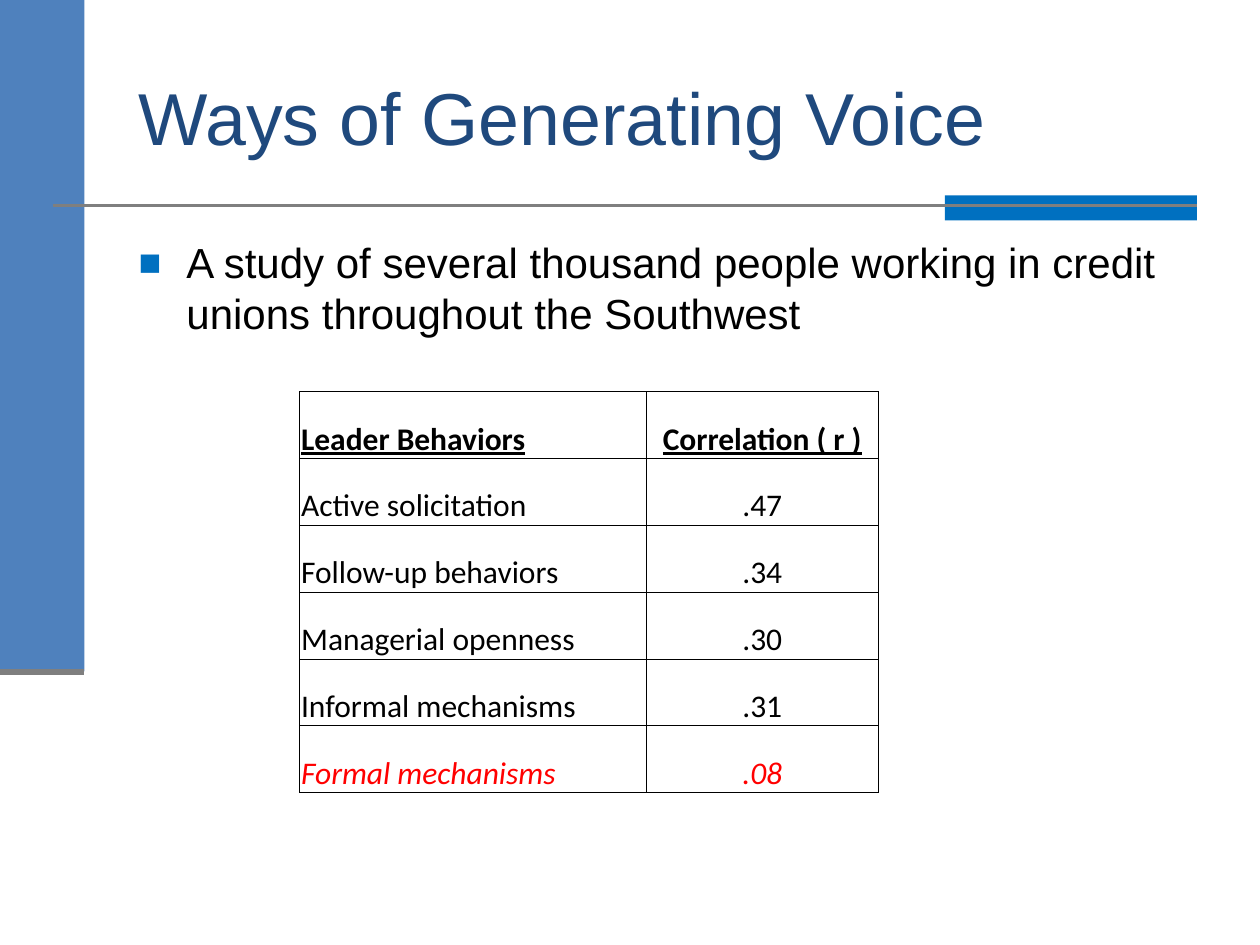
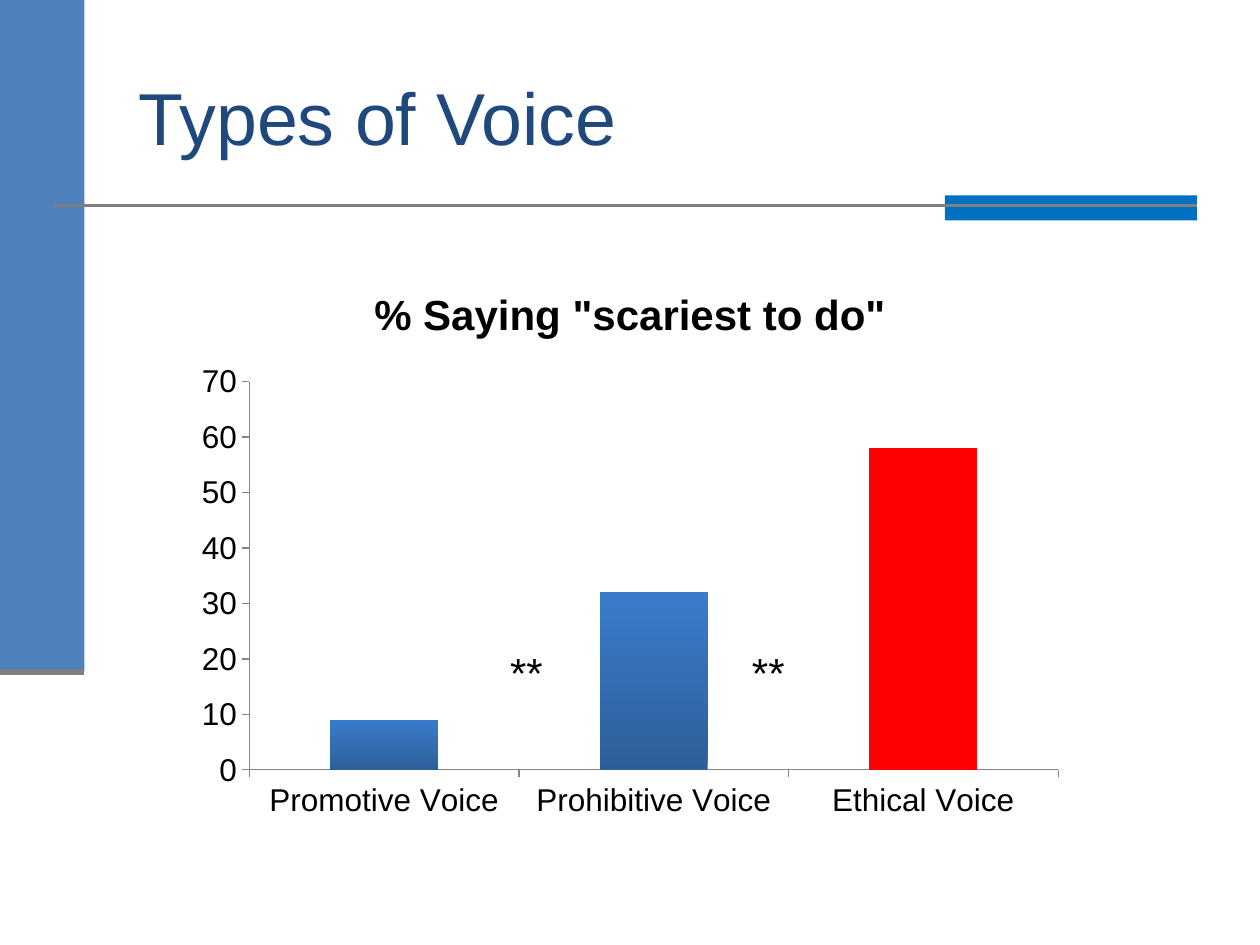
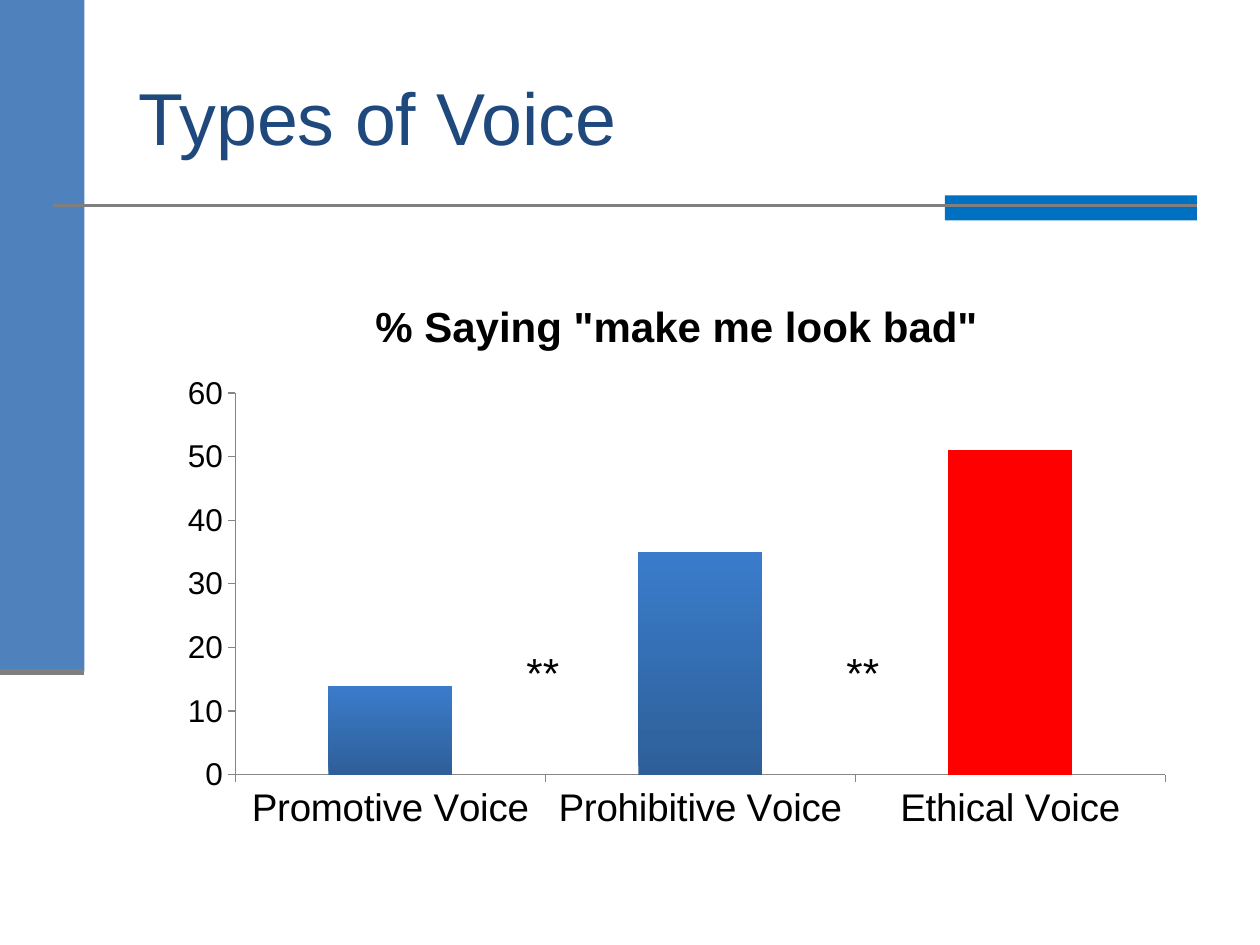
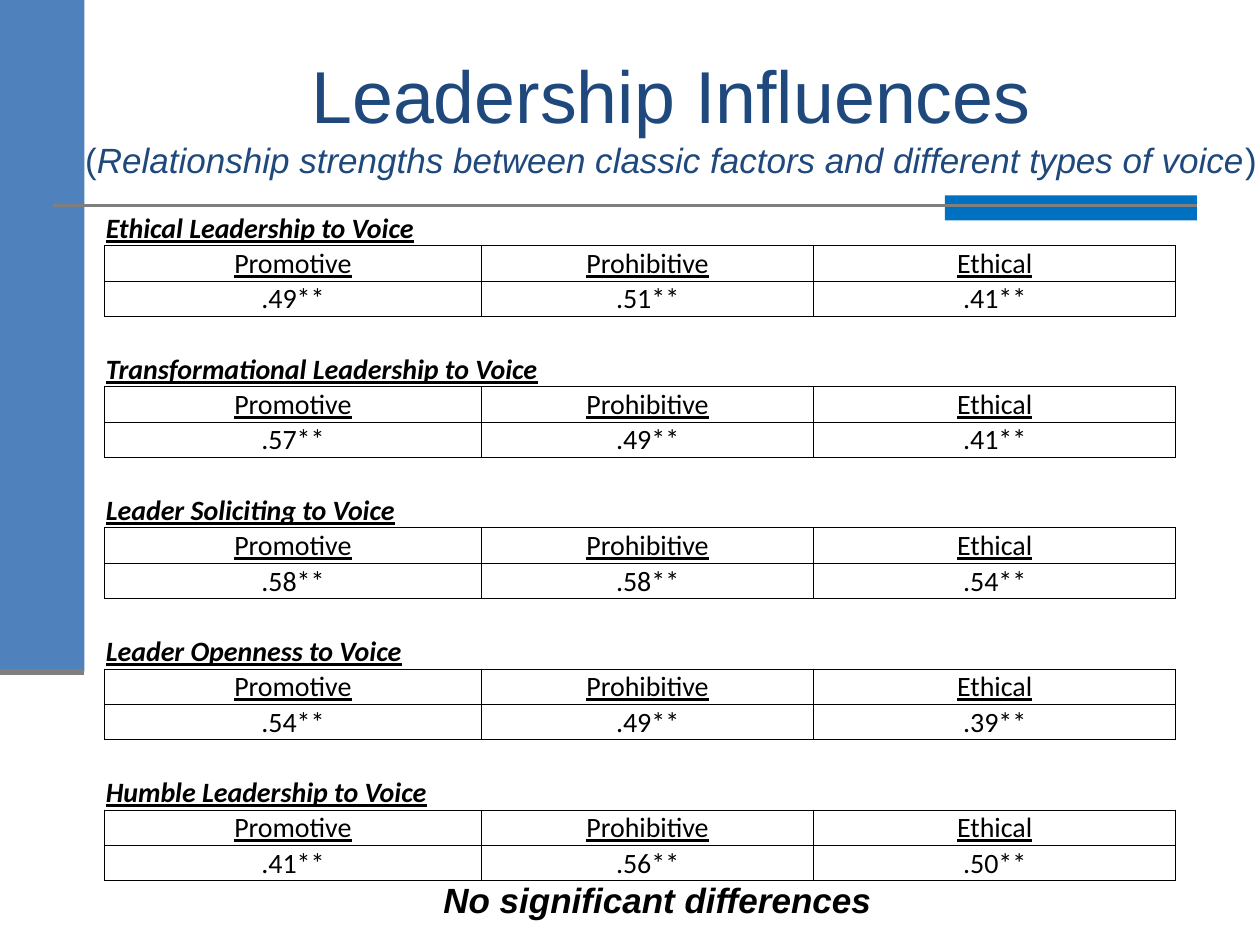
from lxml import etree
from pptx import Presentation
from pptx.chart.data import CategoryChartData
from pptx.dml.color import RGBColor
from pptx.enum.chart import XL_CHART_TYPE, XL_TICK_MARK
from pptx.enum.shapes import MSO_CONNECTOR, MSO_SHAPE
from pptx.enum.text import MSO_ANCHOR, MSO_AUTO_SIZE, PP_ALIGN
from pptx.oxml.ns import qn
from pptx.util import Inches, Pt

COLUMNS = XL_CHART_TYPE.COLUMN_CLUSTERED
TICK_OUT, TICK_NONE = XL_TICK_MARK.OUTSIDE, XL_TICK_MARK.NONE
RECTANGLE, STRAIGHT = MSO_SHAPE.RECTANGLE, MSO_CONNECTOR.STRAIGHT
MIDDLE, BOTTOM = MSO_ANCHOR.MIDDLE, MSO_ANCHOR.BOTTOM
LEFT, CENTER = PP_ALIGN.LEFT, PP_ALIGN.CENTER
FIXED, GROW = MSO_AUTO_SIZE.NONE, MSO_AUTO_SIZE.SHAPE_TO_FIT_TEXT

BLACK, RED, GRAY, NAVY = "000000", "FF0000", "7F7F7F", "1F497D"
BAND_BLUE, ACCENT_BLUE = "4F81BD", "0070C0"
BAR_BOTTOM, BAR_TOP, AXIS_GRAY = "2E5F99", "3A7CCB", "868686"
BODY_FONT, TABLE_FONT = "Arial", "Calibri"
PLAIN_TABLE_STYLE = "{2D5ABB26-0587-4C30-8999-92F81FD0307C}"

TITLE_BOX = (1, 0.3, 8.5, 1.25)
BANDS = [((0, 0, 0.67, 5.33), BAND_BLUE), ((7.5, 1.55, 2, 0.2), ACCENT_BLUE)]
RULES = [((0.42, 1.63, 9.5, 1.63), 1.5), ((0, 5.33, 0.67, 5.33), 3.5)]

STUDY = "A study of several thousand people working in credit unions throughout the Southwest"
CORRELATIONS = [
    ("Leader Behaviors", "Correlation ( r )"),
    ("Active solicitation", ".47"),
    ("Follow-up behaviors", ".34"),
    ("Managerial openness", ".30"),
    ("Informal mechanisms", ".31"),
    ("Formal mechanisms", ".08"),
]

VOICES = ["Promotive", "Prohibitive", "Ethical"]
VOICE_CHARTS = [
    {"title": '% Saying "scariest to do"', "values": (9, 32, 58), "top": 70,
     "box": (1.46, 2.08, 7.08, 4.5), "category_size": 18, "stars": (3.95, 5.87)},
    {"title": '% Saying "make me look bad"', "values": (14, 35, 51), "top": 60,
     "box": (1.33, 2.17, 8.08, 4.5), "category_size": 22, "stars": (4.08, 6.62)},
]

SUBTITLE = "Relationship strengths between classic factors and different types of voice"
INFLUENCES = [
    ("Ethical Leadership to Voice", (".49**", ".51**", ".41**")),
    ("Transformational Leadership to Voice", (".57**", ".49**", ".41**")),
    ("Leader Soliciting to Voice", (".58**", ".58**", ".54**")),
    ("Leader Openness to Voice", (".54**", ".49**", ".39**")),
    ("Humble Leadership to Voice", (".41**", ".56**", ".50**")),
]


def color(value):
    return RGBColor.from_string(value)


def inches(lengths):
    return [Inches(length) for length in lengths]


def place(shape, box):
    shape.left, shape.top, shape.width, shape.height = inches(box)


def style(font, size, tint=BLACK, name=BODY_FONT, bold=False, italic=False, underline=False):
    font.size, font.name = Pt(size), name
    font.bold, font.italic, font.underline = bold, italic, underline
    font.color.rgb = color(tint)


def start_slide(deck, layout, title="", box=TITLE_BOX, align=LEFT):
    page = deck.slides.add_slide(deck.slide_layouts[layout])
    for band_box, fill in BANDS:
        band = page.shapes.add_shape(RECTANGLE, *inches(band_box))
        band.shadow.inherit = False
        band.fill.solid()
        band.fill.fore_color.rgb = color(fill)
        band.line.fill.background()
    for ends, width in RULES:
        rule = page.shapes.add_connector(STRAIGHT, *inches(ends))
        rule.line.width = Pt(width)
        rule.line.color.rgb = color(GRAY)
        etree.SubElement(rule._element.spPr, qn("a:effectLst"))
    heading = page.shapes.title
    place(heading, box)
    frame = heading.text_frame
    frame.auto_size, frame.vertical_anchor = FIXED, MIDDLE
    para = frame.paragraphs[0]
    para.alignment = align
    style(para.font, 42, NAVY)
    if title:
        para.text = title
    return page


def add_label(page, text, box, size, **looks):
    label = page.shapes.add_textbox(*inches(box))
    frame = label.text_frame
    frame.word_wrap, frame.auto_size = False, GROW
    para = frame.paragraphs[0]
    para.text = text
    style(para.font, size, **looks)


def add_bullet(para):
    properties = para._p.get_or_add_pPr()
    properties.set("marL", str(Inches(0.38)))
    properties.set("indent", str(-Inches(0.38)))
    tint = etree.SubElement(properties, qn("a:buClr"))
    etree.SubElement(tint, qn("a:srgbClr"), val=ACCENT_BLUE)
    etree.SubElement(properties, qn("a:buSzPct"), val="90000")
    etree.SubElement(properties, qn("a:buFont"), typeface=BODY_FONT)
    etree.SubElement(properties, qn("a:buChar"), char="■")


def add_plain_table(page, rows, left, top, widths, row_height):
    frame = page.shapes.add_table(rows, len(widths), *inches((left, top, sum(widths), rows * row_height)))
    table = frame.table
    table.first_row = table.horz_banding = False
    table._tbl.tblPr.find(qn("a:tableStyleId")).text = PLAIN_TABLE_STYLE
    for column, width in zip(table.columns, widths):
        column.width = Inches(width)
    for row in table.rows:
        row.height = Inches(row_height)
    return table


def fill_cell(cell, text, size, align=CENTER, border=True, **looks):
    cell.margin_left = cell.margin_right = cell.margin_top = Inches(0.01)
    cell.margin_bottom = 0
    cell.vertical_anchor = BOTTOM
    if border:
        properties = cell._tc.get_or_add_tcPr()
        for side in ("lnL", "lnR", "lnT", "lnB"):
            line = etree.SubElement(properties, qn(f"a:{side}"), w=str(Pt(0.5)))
            fill = etree.SubElement(line, qn("a:solidFill"))
            etree.SubElement(fill, qn("a:srgbClr"), val=BLACK)
    cell.fill.background()
    para = cell.text_frame.paragraphs[0]
    if text:
        para.text = text
    para.alignment = align
    style(para.font, size, name=TABLE_FONT, **looks)


def build_correlations(deck):
    page = start_slide(deck, 1, "Ways of Generating Voice")
    body = page.placeholders[1]
    place(body, (1, 1.83, 9, 1.36))
    body.text_frame.auto_size = FIXED
    para = body.text_frame.paragraphs[0]
    para.text = STUDY
    add_bullet(para)
    para.space_before = Pt(5)
    style(para.font, 24)

    table = add_plain_table(page, len(CORRELATIONS), 2.38, 3.11, (2.75, 1.84), 0.53)
    last = len(CORRELATIONS) - 1
    for row, texts in enumerate(CORRELATIONS):
        for column, text in enumerate(texts):
            fill_cell(table.cell(row, column), text, 18, CENTER if column else LEFT,
                      tint=RED if row == last else BLACK, italic=row == last,
                      bold=row == 0, underline=row == 0)


def build_voice_chart(deck, content):
    page = start_slide(deck, 5, "Types of Voice")
    data = CategoryChartData()
    data.categories = [f"{voice} Voice" for voice in VOICES]
    data.add_series("Series 1", content["values"])
    chart = page.shapes.add_chart(COLUMNS, *inches(content["box"]), data).chart
    style(chart.font, 18)
    chart.has_legend = False
    chart.has_title = True
    para = chart.chart_title.text_frame.paragraphs[0]
    para.text = content["title"]
    style(para.font, 24, bold=True)
    chart.chart_title.include_in_layout = False

    for axis, size in ((chart.category_axis, content["category_size"]), (chart.value_axis, 18)):
        axis.has_major_gridlines = False
        axis.major_tick_mark, axis.minor_tick_mark = TICK_OUT, TICK_NONE
        axis.format.line.color.rgb = color(AXIS_GRAY)
        style(axis.tick_labels.font, size)
    chart.value_axis.minimum_scale = 0
    chart.value_axis.maximum_scale = content["top"]
    chart.value_axis.major_unit = 10

    plot = chart.plots[0]
    plot.gap_width, plot.vary_by_categories = 150, False
    series = plot.series[0]
    bars = series.format.fill
    bars.gradient()
    bars.gradient_angle = 90
    for stop, tint in zip(bars.gradient_stops, (BAR_BOTTOM, BAR_TOP)):
        stop.color.rgb = color(tint)
    ethical = series.points[2].format.fill
    ethical.solid()
    ethical.fore_color.rgb = color(RED)

    for left in content["stars"]:
        add_label(page, "**", (left, 5.08, 0.46, 0.51), 24)


def build_influences(deck):
    page = start_slide(deck, 5, box=(0.4, 0.11, 9.85, 1.61), align=CENTER)
    para = page.shapes.title.text_frame.paragraphs[0]
    para.add_run().text = "Leadership Influences"
    para.add_line_break()
    for text, italic in (("(", False), (SUBTITLE, True), (")", False)):
        span = para.add_run()
        span.text = text
        span.font.size, span.font.italic = Pt(20), italic

    add_label(page, "No significant differences", (3.42, 6.92, 3.69, 0.44), 20, bold=True, italic=True)

    block = 4
    rows = block * len(INFLUENCES) - 1
    table = add_plain_table(page, rows, 0.83, 1.67, (2.99, 2.64, 2.87), 0.28)
    for index, (name, values) in enumerate(INFLUENCES):
        top = index * block
        table.cell(top, 0).merge(table.cell(top, 1))
        for column, (voice, value) in enumerate(zip(VOICES, values)):
            fill_cell(table.cell(top, column), "" if column else name, 16, LEFT, border=False,
                      bold=True, italic=True, underline=True)
            fill_cell(table.cell(top + 1, column), voice, 16, underline=True)
            fill_cell(table.cell(top + 2, column), value, 16)
            if top + 3 < rows:
                fill_cell(table.cell(top + 3, column), "", 16, border=False)


def main():
    deck = Presentation()
    deck.slide_width, deck.slide_height = Inches(10), Inches(7.5)
    build_correlations(deck)
    for content in VOICE_CHARTS:
        build_voice_chart(deck, content)
    build_influences(deck)
    deck.save("out.pptx")


if __name__ == "__main__":
    main()
